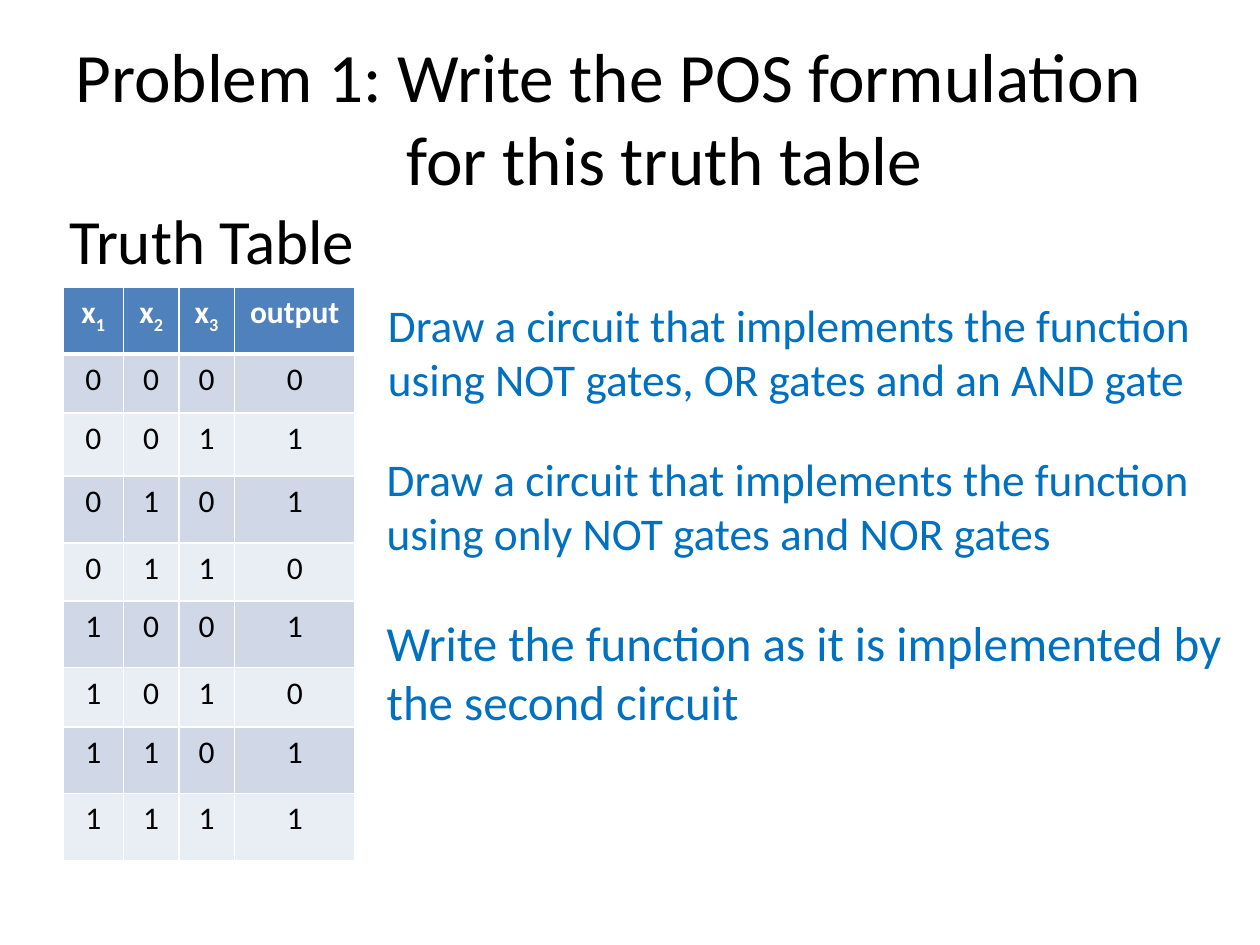
from dataclasses import dataclass

from lxml.etree import SubElement
from pptx import Presentation
from pptx.dml.color import RGBColor
from pptx.enum.text import MSO_ANCHOR as Anchor, PP_ALIGN as Align
from pptx.oxml.ns import qn
from pptx.util import Inches, Pt

FONT = "Calibri"
COLORS = {
    "black": "000000",
    "white": "FFFFFF",
    "task": "0070C0",
    "header": "4F81BD",
    "odd_row": "D0D8E8",
    "even_row": "E9EDF4",
}


@dataclass
class TextBlock:
    text: str
    left: float
    top: float
    width: float
    height: float
    size: float
    color: str = "black"
    anchor: Anchor = Anchor.TOP
    margin_left: float = 0.1
    hanging: float = 0


def add_run(paragraph, text: str, size: float, color: str, bold: bool = False):
    run = paragraph.add_run()
    run.text = text
    run.font.name = FONT
    run.font.size = Pt(size)
    run.font.bold = bold
    run.font.color.rgb = RGBColor.from_string(COLORS[color])
    return run


def add_text(slide, block: TextBlock) -> None:
    shape = slide.shapes.add_textbox(
        Inches(block.left), Inches(block.top), Inches(block.width), Inches(block.height))
    frame = shape.text_frame
    frame.word_wrap = True
    frame.vertical_anchor = block.anchor
    frame.margin_left = Inches(block.margin_left)
    paragraph = frame.paragraphs[0]
    if block.hanging:
        properties = paragraph._p.get_or_add_pPr()
        properties.set("marL", str(Inches(block.hanging)))
        properties.set("indent", str(-Inches(block.hanging)))
    add_run(paragraph, block.text, block.size, block.color)


def style_cell(cell, fill: str, bottom_width: float) -> None:
    # Borders come before the fill in the cell properties
    properties = cell._tc.get_or_add_tcPr()
    for side, width in (("L", 1), ("R", 1), ("T", 1), ("B", bottom_width)):
        line = SubElement(properties, qn(f"a:ln{side}"), w=str(Pt(width)))
        solid = SubElement(line, qn("a:solidFill"))
        SubElement(solid, qn("a:srgbClr"), val=COLORS["white"])
    cell.fill.solid()
    cell.fill.fore_color.rgb = RGBColor.from_string(COLORS[fill])


def add_truth_table(slide, outputs: str) -> None:
    widths = [0.48, 0.44, 0.44, 0.96]
    heights = [0.53, 0.47, 0.5, 0.53, 0.46, 0.53, 0.47, 0.53, 0.53]
    table = slide.shapes.add_table(
        len(heights), len(widths), Inches(0.5), Inches(2.28),
        Inches(sum(widths)), Inches(sum(heights))).table
    for column, width in zip(table.columns, widths):
        column.width = Inches(width)
    for row, height in zip(table.rows, heights):
        row.height = Inches(height)

    # Header: a name and an optional subscript
    for column, (name, subscript) in enumerate(
            [("x", "1"), ("x", "2"), ("x", "3"), ("output", "")]):
        cell = table.cell(0, column)
        style_cell(cell, "header", 3)
        paragraph = cell.text_frame.paragraphs[0]
        paragraph.alignment = Align.CENTER
        add_run(paragraph, name, 18, "white", True)
        if subscript:
            run = add_run(paragraph, subscript, 18, "white", True)
            run.font._element.set("baseline", "-25000")

    # Body: inputs count upwards in binary
    for number, output in enumerate(outputs):
        fill = "even_row" if number % 2 else "odd_row"
        for column, digit in enumerate(f"{number:03b}{output}"):
            cell = table.cell(number + 1, column)
            style_cell(cell, fill, 1)
            paragraph = cell.text_frame.paragraphs[0]
            paragraph.alignment = Align.CENTER
            add_run(paragraph, digit, 18, "black")


def main() -> None:
    presentation = Presentation()
    presentation.slide_width = Inches(10)
    presentation.slide_height = Inches(7.5)
    slide = presentation.slides.add_slide(presentation.slide_layouts[6])

    # Title and table heading
    add_text(slide, TextBlock(
        "Problem 1: Write the POS formulation for this truth table",
        0.5, 0.3, 9, 1.25, 39.6, anchor=Anchor.MIDDLE, hanging=2.63))
    add_text(slide, TextBlock(
        "Truth Table", 0.34, 1.55, 2.63, 0.71, 36, margin_left=0.21))

    add_truth_table(slide, "01101011")

    # Tasks
    for text, left, top, size in (
        ("Draw a circuit that implements the function using NOT gates, "
         "OR gates and an AND gate", 2.98, 2.31, 25.9),
        ("Draw a circuit that implements the function using only "
         "NOT gates and NOR gates", 2.97, 3.53, 25.9),
        ("Write the function as it is implemented by the second circuit",
         2.97, 4.81, 28),
    ):
        add_text(slide, TextBlock(text, left, top, 6.85, 1.1, size, "task"))

    presentation.save("out.pptx")


if __name__ == "__main__":
    main()
